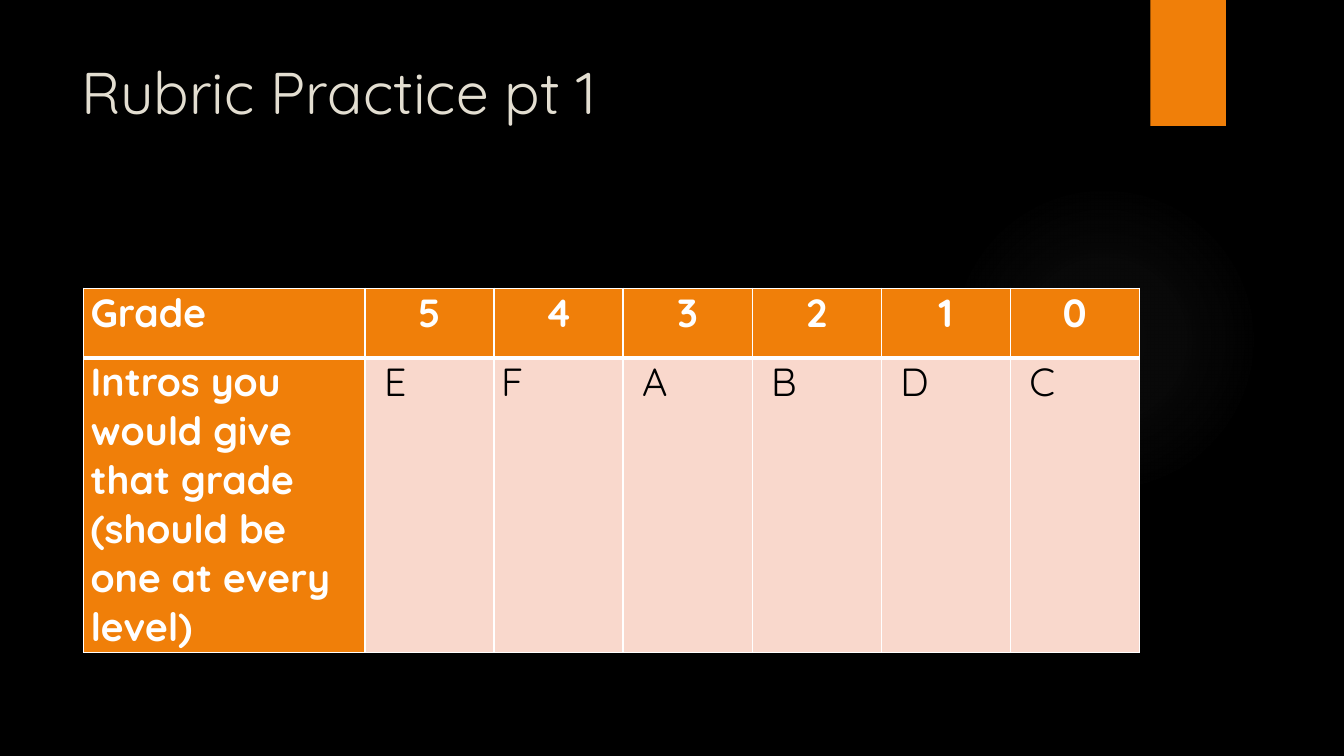
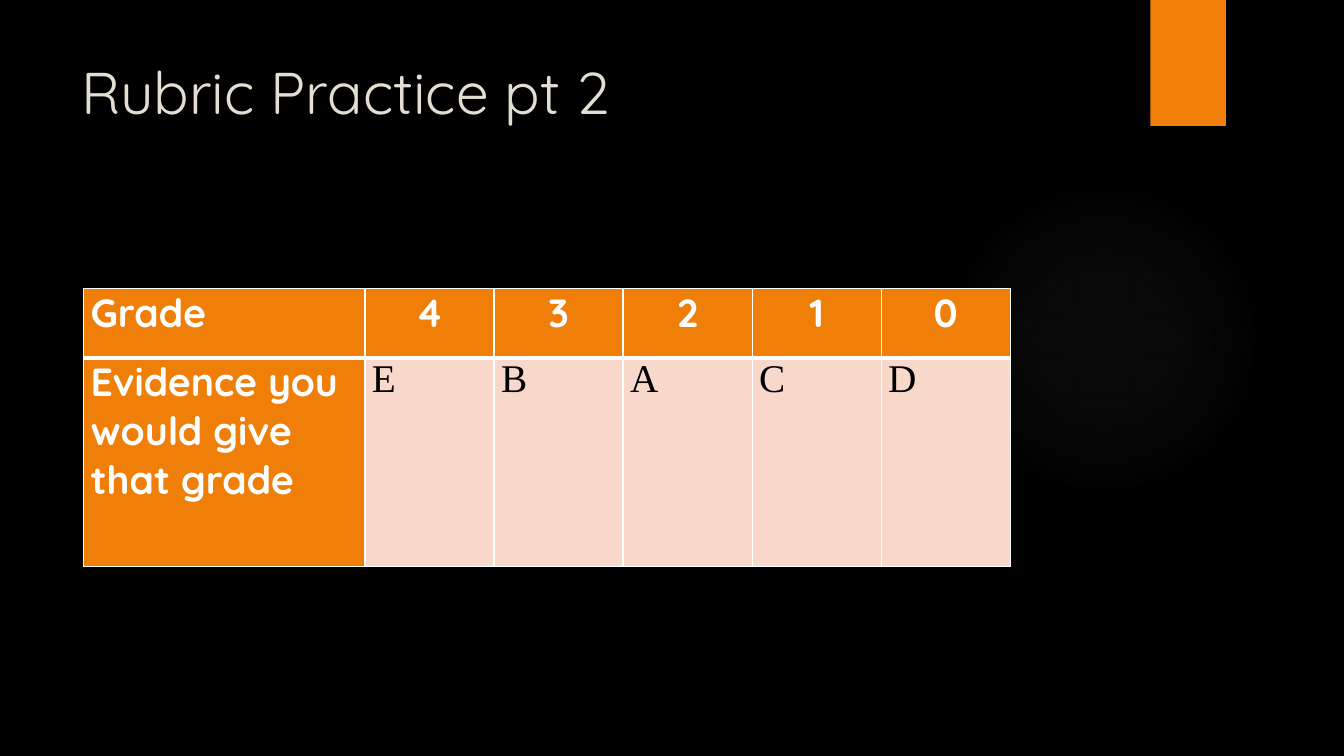
from lxml.etree import SubElement
from pptx import Presentation
from pptx.dml.color import RGBColor
from pptx.enum.shapes import MSO_SHAPE
from pptx.enum.text import PP_ALIGN
from pptx.oxml import parse_xml
from pptx.oxml.ns import nsdecls, qn
from pptx.util import Inches, Pt

COLORS = {
    "background": "000000",
    "accent": "F07F09",
    "tint": "F9D8CC",
    "title": "E3DED1",
    "light": "FFFFFF",
    "dark": "000000",
    "glow": "848484",
}
FONT = "Quicksand"
GLOW_STOPS = [(0, 7), (36, 6), (69, 0)]
LABEL_W, GRADE_W, HEADER_H = 2.79, 1.28, 0.69
CELL_INSET = 0.07
THIN, THICK = 1, 3

RUBRICS = [
    {
        "title": "Rubric Practice pt 1",
        "label": "Intros you would give that grade (should be one at every level)",
        "answers": "EFABDC",
        "indents": [0.12, 0, 0.12, 0.12, 0.12, 0.12],
        "font": FONT,
        "height": 2.92,
    },
    {
        "title": "Rubric Practice pt 2",
        "label": "Evidence you would give that grade",
        "answers": "EBACD",
        "indents": [0] * 5,
        "font": "Times New Roman",
        "height": 2.07,
    },
]


def rgb(name):
    """Return the named colour."""
    return RGBColor.from_string(COLORS[name])


def style_text(p, size, color, font=FONT, bold=False):
    """Set the font of a paragraph."""
    p.font.name, p.font.size, p.font.bold = font, Pt(size), bold
    p.font.color.rgb = rgb(color)


def add_block(s, shape, box):
    """Add a preset shape with no outline and no shadow."""
    sp = s.shapes.add_shape(shape, *map(Inches, box))
    sp.shadow.inherit = False
    sp.line.fill.background()
    return sp


def add_glow(s, box):
    """Add a faint round glow that fades out towards its edge."""
    sp = add_block(s, MSO_SHAPE.OVAL, box)
    stops = "".join(
        f'<a:gs pos="{pos * 1000}"><a:srgbClr val="{COLORS["glow"]}">'
        f'<a:alpha val="{alpha * 1000}"/></a:srgbClr></a:gs>'
        for pos, alpha in GLOW_STOPS
    )
    geometry = sp.element.spPr.find(qn("a:prstGeom"))
    geometry.addnext(parse_xml(
        f'<a:gradFill {nsdecls("a")}><a:gsLst>{stops}</a:gsLst><a:path path="circle">'
        '<a:fillToRect l="50000" t="50000" r="50000" b="50000"/></a:path></a:gradFill>'
    ))


def add_tab(s, box):
    """Add the accent tab at the top edge."""
    sp = add_block(s, MSO_SHAPE.RECTANGLE, box)
    sp.fill.solid()
    sp.fill.fore_color.rgb = rgb("accent")


def add_title(s, text, box):
    """Add the slide title."""
    tf = s.shapes.add_textbox(*map(Inches, box)).text_frame
    tf.word_wrap = True
    p = tf.paragraphs[0]
    p.text = text
    style_text(p, 42, "title")


def set_borders(cell, top, bottom):
    """Draw light borders, with given top and bottom widths in points."""
    tc_pr = cell._tc.get_or_add_tcPr()
    widths = [("lnL", THIN), ("lnR", THIN), ("lnT", top), ("lnB", bottom)]
    for i, (tag, width) in enumerate(widths):
        ln = SubElement(tc_pr, qn(f"a:{tag}"), w=str(Pt(width)))
        fill = SubElement(ln, qn("a:solidFill"))
        SubElement(fill, qn("a:srgbClr"), val=COLORS["light"])
        tc_pr.insert(i, ln)


def fill_cell(cell, text, fill, color, font=FONT, bold=True, align=PP_ALIGN.LEFT, indent=0):
    """Write and colour one table cell."""
    cell.margin_left = Inches(CELL_INSET + indent)
    cell.margin_right = Inches(CELL_INSET)
    cell.margin_top = cell.margin_bottom = 0
    cell.fill.solid()
    cell.fill.fore_color.rgb = rgb(fill)
    p = cell.text_frame.paragraphs[0]
    p.text = text
    p.alignment = align
    style_text(p, 28, color, font, bold)


def add_rubric(s, rubric, left, top):
    """Add the table of grades, highest first, and their answers."""
    answers = rubric["answers"]
    n = len(answers)
    widths = [LABEL_W] + [GRADE_W] * n
    heights = [HEADER_H, rubric["height"]]
    size = left, top, sum(widths), sum(heights)
    table = s.shapes.add_table(2, n + 1, *map(Inches, size)).table
    table.horz_banding = False
    for col, width in zip(table.columns, widths):
        col.width = Inches(width)
    for row, height in zip(table.rows, heights):
        row.height = Inches(height)

    for r, label in enumerate(["Grade", rubric["label"]]):
        fill_cell(table.cell(r, 0), label, "accent", "light")
    for c, (answer, indent) in enumerate(zip(answers, rubric["indents"]), 1):
        fill_cell(table.cell(0, c), str(n - c), "accent", "light", align=PP_ALIGN.CENTER)
        fill_cell(table.cell(1, c), answer, "tint", "dark", rubric["font"], False, indent=indent)
    for c in range(n + 1):
        set_borders(table.cell(0, c), THIN, THICK)
        set_borders(table.cell(1, c), THICK, THIN)


def add_rubric_slide(prs, rubric):
    """Add one rubric slide on the shared backdrop."""
    s = prs.slides.add_slide(prs.slide_layouts[6])
    s.background.fill.solid()
    s.background.fill.fore_color.rgb = rgb("background")
    add_glow(s, (9.41, 1.83, 3.08, 3.08))
    add_tab(s, (11.41, 0, 0.75, 1.25))
    add_title(s, rubric["title"], (0.71, 0.5, 10.29, 1.53))
    add_rubric(s, rubric, 0.83, 2.86)


def main():
    """Build and save the presentation."""
    prs = Presentation()
    prs.slide_width, prs.slide_height = Inches(13.33), Inches(7.5)
    for rubric in RUBRICS:
        add_rubric_slide(prs, rubric)
    prs.save("out.pptx")


if __name__ == "__main__":
    main()
